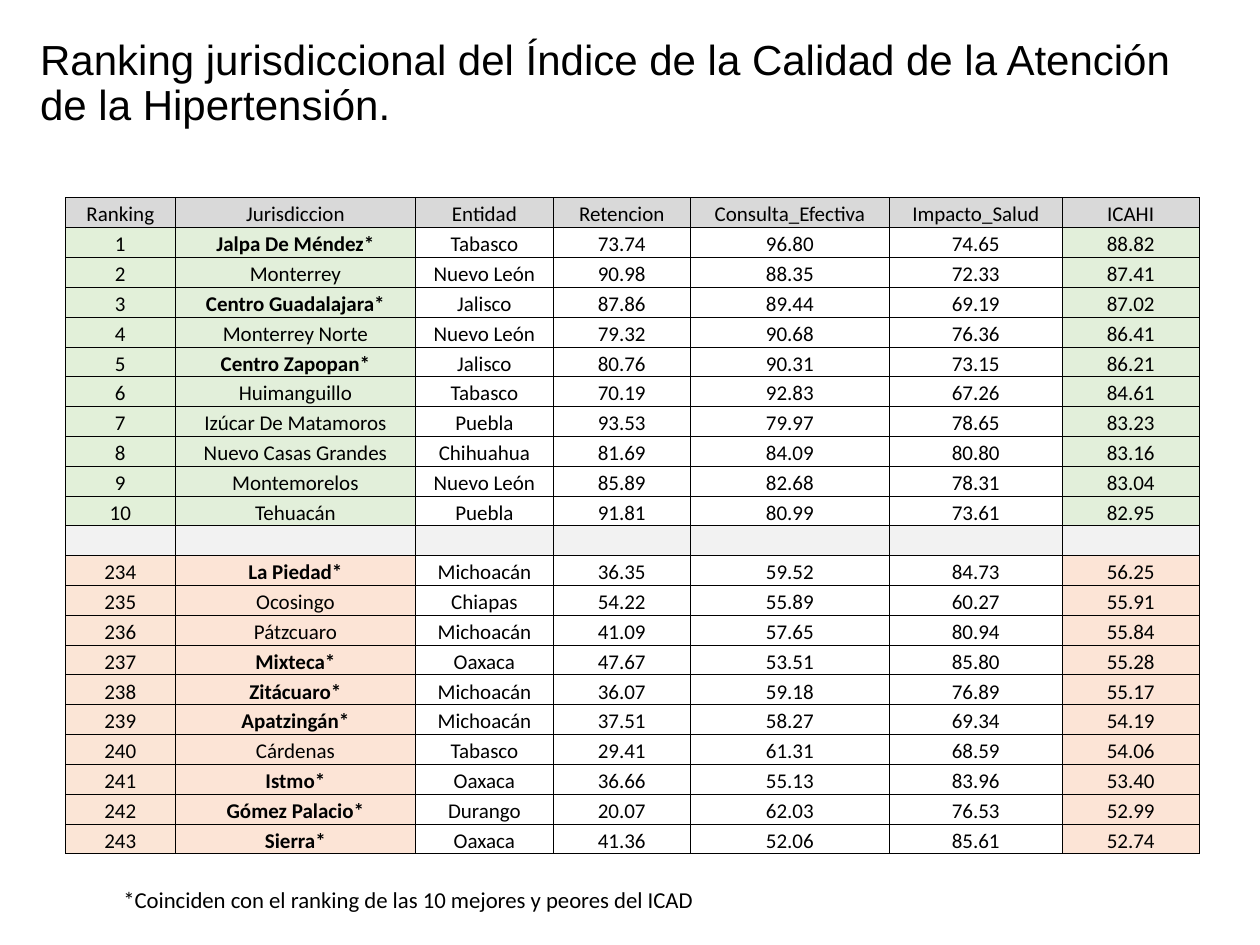
from lxml import etree
from pptx import Presentation
from pptx import util as u
from pptx.dml.color import RGBColor
from pptx.enum import text
from pptx.oxml import ns

COLORS = {
    "ink": "000000",
    "header": "D9D9D9",
    "gap": "F2F2F2",
    "best_rank": "E2F0D9",
    "best": "E2EFDA",
    "worst_rank": "FBE5D6",
    "worst": "FCE4D6",
}

HEADER = ["Ranking", "Jurisdiccion", "Entidad", "Retencion",
          "Consulta_Efectiva", "Impacto_Salud", "ICAHI"]

BEST = """1|Jalpa De Méndez*|Tabasco|73.74|96.80|74.65|88.82
2|Monterrey|Nuevo León|90.98|88.35|72.33|87.41
3|Centro Guadalajara*|Jalisco|87.86|89.44|69.19|87.02
4|Monterrey Norte|Nuevo León|79.32|90.68|76.36|86.41
5|Centro Zapopan*|Jalisco|80.76|90.31|73.15|86.21
6|Huimanguillo|Tabasco|70.19|92.83|67.26|84.61
7|Izúcar De Matamoros|Puebla|93.53|79.97|78.65|83.23
8|Nuevo Casas Grandes|Chihuahua|81.69|84.09|80.80|83.16
9|Montemorelos|Nuevo León|85.89|82.68|78.31|83.04
10|Tehuacán|Puebla|91.81|80.99|73.61|82.95"""

WORST = """234|La Piedad*|Michoacán|36.35|59.52|84.73|56.25
235|Ocosingo|Chiapas|54.22|55.89|60.27|55.91
236|Pátzcuaro|Michoacán|41.09|57.65|80.94|55.84
237|Mixteca*|Oaxaca|47.67|53.51|85.80|55.28
238|Zitácuaro*|Michoacán|36.07|59.18|76.89|55.17
239|Apatzingán*|Michoacán|37.51|58.27|69.34|54.19
240|Cárdenas|Tabasco|29.41|61.31|68.59|54.06
241|Istmo*|Oaxaca|36.66|55.13|83.96|53.40
242|Gómez Palacio*|Durango|20.07|62.03|76.53|52.99
243|Sierra*|Oaxaca|41.36|52.06|85.61|52.74"""

COLUMN_WIDTHS = [0.87, 1.91, 1.09, 1.09, 1.58, 1.37, 1.09]


def apply(target, values):
    for name, value in values.items():
        setattr(target, name, value)


def group_rows(block, group):
    fills = [group + "_rank", group, None, None, None, None, group]
    return [(line.split("|"), fills) for line in block.splitlines()]


class RankingSlide:
    cell_font = {"name": "Calibri", "size": u.Pt(12)}
    cell_format = {
        "margin_left": u.Inches(0.01),
        "margin_right": u.Inches(0.01),
        "margin_top": u.Inches(0.01),
        "margin_bottom": 0,
        "vertical_anchor": text.MSO_ANCHOR.BOTTOM,
    }
    table_format = {"first_row": False, "horz_banding": False}

    def __init__(self, deck):
        self.slide = deck.slides.add_slide(deck.slide_layouts[6])

    def add_words(self, paragraph, words, font):
        run = paragraph.add_run()
        run.text = words
        apply(run.font, font)
        run.font.color.rgb = RGBColor.from_string(COLORS["ink"])

    def add_text(self, words, box, font, frame_format, line_spacing=None):
        frame = self.slide.shapes.add_textbox(*map(u.Inches, box)).text_frame
        apply(frame, {"word_wrap": True, **frame_format})
        frame.paragraphs[0].line_spacing = line_spacing
        self.add_words(frame.paragraphs[0], words, font)

    def add_borders(self, cell):
        properties = cell._tc.get_or_add_tcPr()
        for side in "LRTB":
            line = etree.SubElement(properties, ns.qn("a:ln" + side), w=str(u.Pt(0.5)))
            fill = etree.SubElement(line, ns.qn("a:solidFill"))
            etree.SubElement(fill, ns.qn("a:srgbClr"), val=COLORS["ink"])

    def fill_cell(self, cell, words, fill):
        apply(cell, self.cell_format)
        self.add_borders(cell)
        if fill:
            cell.fill.solid()
            cell.fill.fore_color.rgb = RGBColor.from_string(COLORS[fill])
        else:
            cell.fill.background()
        paragraph = cell.text_frame.paragraphs[0]
        paragraph.alignment = text.PP_ALIGN.CENTER
        if words:
            self.add_words(paragraph, words, {**self.cell_font, "bold": words.endswith("*")})
        else:
            etree.SubElement(paragraph._p, ns.qn("a:endParaRPr"), sz="1200")

    def add_table(self, rows, widths, left, top, height):
        box = map(u.Inches, (left, top, sum(widths), height))
        table = self.slide.shapes.add_table(len(rows), len(widths), *box).table
        apply(table, self.table_format)
        for column, width in zip(table.columns, widths):
            column.width = u.Inches(width)
        for table_row, (values, fills) in zip(table.rows, rows):
            table_row.height = u.Inches(height / len(rows))
            for cell, words, fill in zip(table_row.cells, values, fills):
                self.fill_cell(cell, words, fill)


def main():
    deck = Presentation()
    apply(deck, {"slide_width": u.Inches(10), "slide_height": u.Inches(7.5)})
    ranking = RankingSlide(deck)
    count = len(HEADER)
    rows = [
        (HEADER, ["header"] * count),
        *group_rows(BEST, "best"),
        ([""] * count, ["gap"] * count),
        *group_rows(WORST, "worst"),
    ]
    ranking.add_table(rows, COLUMN_WIDTHS, 0.52, 1.57, 5.21)
    ranking.add_text(
        "Ranking jurisdiccional del Índice de la Calidad de la Atención de la Hipertensión.",
        (0.22, 0.26, 9.52, 0.82),
        {"name": "Arial", "size": u.Pt(24)},
        {"vertical_anchor": text.MSO_ANCHOR.MIDDLE},
        line_spacing=0.9,
    )
    ranking.add_text(
        "*Coinciden con el ranking de las 10 mejores y peores del ICAD",
        (0.88, 6.98, 7.59, 0.32),
        {"name": "Calibri", "size": u.Pt(13)},
        {"auto_size": text.MSO_AUTO_SIZE.SHAPE_TO_FIT_TEXT},
    )
    deck.save("out.pptx")


if __name__ == "__main__":
    main()
